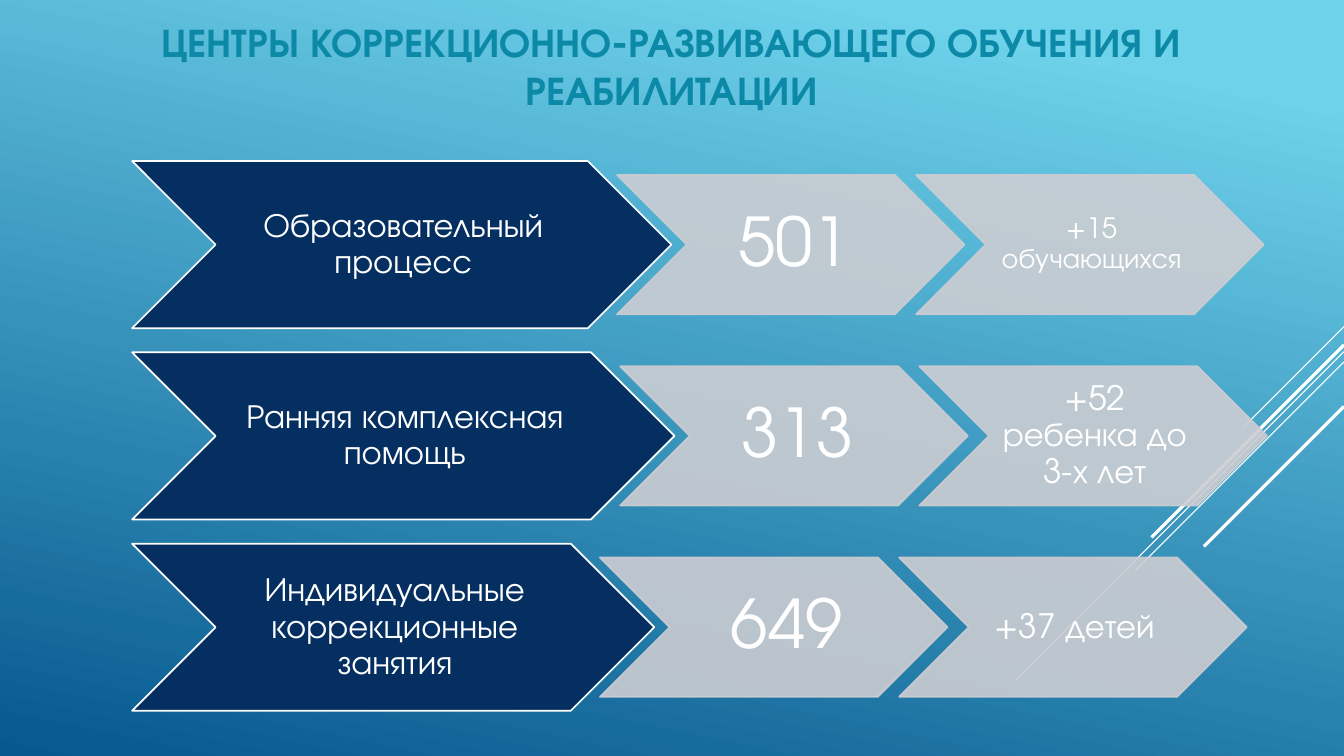
import pptx
import pptx.dml.color
import pptx.enum.shapes
import pptx.enum.text
import pptx.oxml.ns
import pptx.util
from lxml import etree

Cm = pptx.util.Cm
Pt = pptx.util.Pt
RGBColor = pptx.dml.color.RGBColor
qn = pptx.oxml.ns.qn
Align = pptx.enum.text.PP_ALIGN
Anchor = pptx.enum.text.MSO_ANCHOR

WHITE = RGBColor(0xFF, 0xFF, 0xFF)
NAVY = RGBColor(0x05, 0x2F, 0x61)
GREY = RGBColor(0xCC, 0xCD, 0xD2)
TEAL = RGBColor(0x0D, 0x89, 0xA8)
SKY = RGBColor(0x6E, 0xD2, 0xEB)
OCEAN = RGBColor(0x06, 0x58, 0x8E)

WIDE, HIGH = 33.87, 19.05
LEFT, TOP, PITCH = 3.33, 4.06, 4.82
BIG, SMALL, SPAN = 4.21, 3.51, 8.76
LAP, STEP = 1.37, 7.54

ROWS = [
    (13.59, "Образовательный процесс", "501", "+15 обучающихся", 20),
    (13.67, "Ранняя комплексная помощь", "313", "+52 ребенка до 3-х лет", 24),
    (13.16, "Индивидуальные коррекционные занятия", " 649", "+37 детей", 24),
]
RAYS = [
    (8.23, 2.54, 0.75),
    (8.86, 8.28, 0.75),
    (9.12, 5.26, 0.75),
    (8.69, 4.85, 2.25),
    (10.24, 3.53, 2.25),
]


def assign(item, values):
    for key, value in values.items():
        setattr(item, key, value)


class Deck:
    face = "TeX Gyre Adventor"

    def __init__(self):
        self.show = pptx.Presentation()
        assign(self.show, {"slide_width": Cm(WIDE), "slide_height": Cm(HIGH)})
        self.slide = self.show.slides.add_slide(self.show.slide_layouts[5])

    def back(self, stops, angle):
        fill = self.slide.background.fill
        fill.gradient()
        fill.gradient_angle = angle
        for stop, (place, color) in zip(fill.gradient_stops, stops):
            stop.position = place
            stop.color.rgb = color

    def label(self, shape, text, size, color, bold=False, space=1.0, pads=(0.25, 0.13, 0.25, 0.13)):
        frame = shape.text_frame
        sides = ("margin_left", "margin_top", "margin_right", "margin_bottom")
        assign(frame, dict(zip(sides, map(Cm, pads))))
        assign(frame, {
            "text": text,
            "word_wrap": True,
            "auto_size": pptx.enum.text.MSO_AUTO_SIZE.NONE,
            "vertical_anchor": Anchor.MIDDLE,
        })
        para = frame.paragraphs[0]
        assign(para, {"alignment": Align.CENTER, "line_spacing": space})
        font = para.runs[0].font
        assign(font, {"name": self.face, "size": Pt(size), "bold": bold})
        font.color.rgb = color

    def title(self, text):
        shape = self.slide.shapes.title
        assign(shape, {"left": Cm(0.5), "top": Cm(0.25), "width": Cm(32.85), "height": Cm(2.8)})
        self.label(shape, text, 28.8, TEAL, bold=True)

    def ray(self, top, reach, weight):
        line = self.slide.shapes.add_connector(
            pptx.enum.shapes.MSO_CONNECTOR.STRAIGHT,
            Cm(WIDE), Cm(top), Cm(WIDE - reach), Cm(top + reach))
        line.line.width = Pt(weight)
        line.line.color.rgb = WHITE
        etree.SubElement(line._element.spPr, qn("a:effectLst"))

    def chevron(self, box, fill, edge, text, size, pads, alpha=None):
        shape = self.slide.shapes.add_shape(
            pptx.enum.shapes.MSO_SHAPE.CHEVRON, *map(Cm, box))
        shape.shadow.inherit = False
        shape.fill.solid()
        shape.fill.fore_color.rgb = fill
        shape.line.color.rgb = edge
        shape.line.width = Pt(1.25)
        if alpha:
            for color in shape._element.spPr.iter(qn("a:srgbClr")):
                etree.SubElement(color, qn("a:alpha"), val=str(alpha * 1000))
        self.label(shape, text, size, WHITE, space=0.9, pads=pads)


def main():
    deck = Deck()
    deck.back([(0.1, SKY), (1.0, OCEAN)], 258)
    for ray in RAYS:
        deck.ray(*ray)
    deck.title("ЦЕНТРЫ КОРРЕКЦИОННО-РАЗВИВАЮЩЕГО ОБУЧЕНИЯ И РЕАБИЛИТАЦИИ")
    thin, thick = (0.08, 0.05, 0, 0.05), (0.18, 0.08, 0, 0.08)
    for row, (width, task, count, gain, size) in enumerate(ROWS):
        top = TOP + row * PITCH
        deck.chevron((LEFT, top, width, BIG), NAVY, WHITE, task, 24, thin)
        left = LEFT + width - LAP
        cells = [(count, 48, thick), (gain, size, thin)]
        for col, (text, points, pads) in enumerate(cells):
            box = (left + col * STEP, top + (BIG - SMALL) / 2, SPAN, SMALL)
            deck.chevron(box, GREY, GREY, text, points, pads, alpha=90)
    deck.show.save("out.pptx")


if __name__ == "__main__":
    main()
